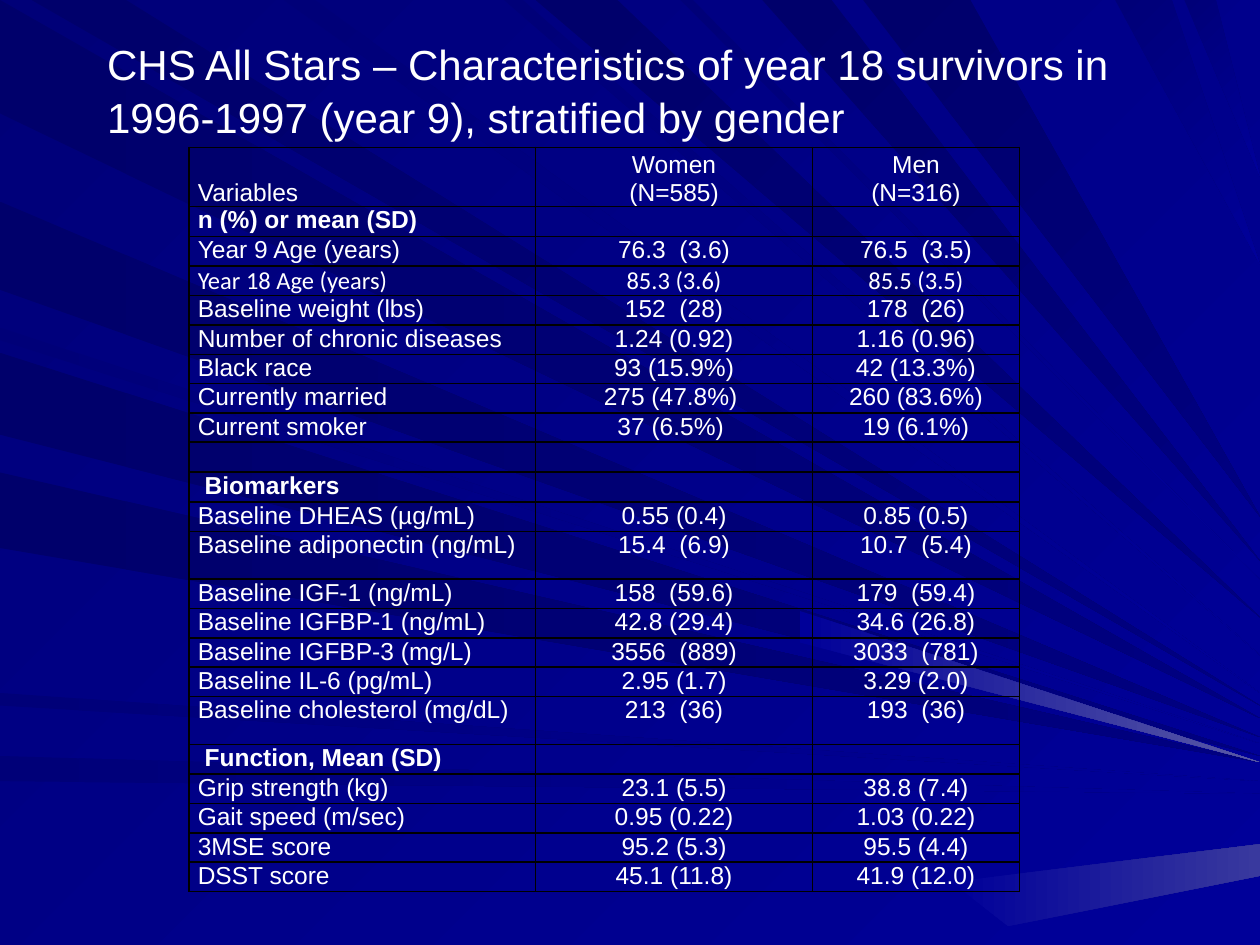
from lxml import etree
from pptx import Presentation
from pptx.dml.color import RGBColor
from pptx.enum.text import MSO_ANCHOR, MSO_AUTO_SIZE, PP_ALIGN
from pptx.oxml.ns import qn
from pptx.util import Inches, Pt

LEFT, CENTER = PP_ALIGN.LEFT, PP_ALIGN.CENTER
TOP, MIDDLE, BOTTOM = MSO_ANCHOR.TOP, MSO_ANCHOR.MIDDLE, MSO_ANCHOR.BOTTOM
NO_AUTOFIT = MSO_AUTO_SIZE.NONE

WHITE = RGBColor.from_string("FFFFFF")
BLACK = RGBColor.from_string("000000")
DEEP = RGBColor.from_string("00006B")
NAVY = RGBColor.from_string("000078")
DARK = RGBColor.from_string("000080")
BLUE = RGBColor.from_string("000099")
HAZE = RGBColor.from_string("39399E")
SHINE = RGBColor.from_string("5A5AA6")

# Rays run from an edge of the slide to a tip on the right side:
# start and end on the edge, height of the tip, in inches
LEFT_RAYS = [(0, 0.9, 5.7), (1.6, 2.3, 5.85), (2.6, 2.7, 5.9), (2.8, 3.45, 6),
             (3.75, 4.35, 6.05), (5.5, 5.6, 6.2), (6, 6.2, 6.3)]
TOP_RAYS = [(0.25, 1, 5.6), (2.25, 2.5, 5.5), (4, 4.15, 5.2), (4.25, 4.9, 4.9),
            (5.4, 5.5, 4.6), (6.05, 6.6, 4.45), (6.85, 7.7, 4.1),
            (8.85, 9.3, 2.1), (9.4, 9.65, 1.4)]

ROWS = [
    ("Variables", "Women\n(N=585)", "Men\n(N=316)"),
    ("n (%) or mean (SD)", "", ""),
    ("Year 9 Age (years)", "76.3  (3.6)", "76.5  (3.5)"),
    ("Year 18 Age (years)", "85.3 (3.6)", "85.5 (3.5)"),
    ("Baseline weight (lbs)", "152  (28)", "178  (26)"),
    ("Number of chronic diseases", "1.24 (0.92)", "1.16 (0.96)"),
    ("Black race", "93 (15.9%)", "42 (13.3%)"),
    ("Currently married", "275 (47.8%) ", "260 (83.6%)"),
    ("Current smoker", "37 (6.5%) ", "19 (6.1%)"),
    ("", "", ""),
    (" Biomarkers", "", ""),
    ("Baseline DHEAS (µg/mL)", "0.55 (0.4)", "0.85 (0.5)"),
    ("Baseline adiponectin (ng/mL)", "15.4  (6.9)", "10.7  (5.4)"),
    ("Baseline IGF-1 (ng/mL)", "158  (59.6)", "179  (59.4)"),
    ("Baseline IGFBP-1 (ng/mL)", "42.8 (29.4)", "34.6 (26.8)"),
    ("Baseline IGFBP-3 (mg/L)", "3556  (889)", "3033  (781)"),
    ("Baseline IL-6 (pg/mL)", "2.95 (1.7)", "3.29 (2.0)"),
    ("Baseline cholesterol (mg/dL)", "213  (36)", "193  (36)"),
    (" Function, Mean (SD)", "", ""),
    ("Grip strength (kg)", "23.1 (5.5)", "38.8 (7.4)"),
    ("Gait speed (m/sec)", "0.95 (0.22)", "1.03 (0.22)"),
    ("3MSE score", "95.2 (5.3)", "95.5 (4.4)"),
    ("DSST score", "45.1 (11.8)", "41.9 (12.0)"),
]
CALIBRI_ROW = 3
TABLE_HEIGHT = 5.89
TALL_ROWS = {0: 0.47, 12: 0.38, 17: 0.38}
ROW_HEIGHT = (TABLE_HEIGHT - sum(TALL_ROWS.values())) / (len(ROWS) - len(TALL_ROWS))


def set_gradient(fill, start, end, angle):
    """Two-colour linear gradient, angle measured clockwise."""
    fill.gradient()
    fill.gradient_angle = -angle % 360
    for stop, color in zip(fill.gradient_stops, (start, end)):
        stop.color.rgb = color


def add_borders(cell):
    tcPr = cell._tc.get_or_add_tcPr()
    for side in ("a:lnL", "a:lnR", "a:lnT", "a:lnB"):
        ln = etree.SubElement(tcPr, qn(side), w=str(Pt(1)))
        solid = etree.SubElement(ln, qn("a:solidFill"))
        etree.SubElement(solid, qn("a:srgbClr"), val=str(BLACK))


prs = Presentation()
prs.slide_width, prs.slide_height = Inches(10), Inches(7.5)
s = prs.slides.add_slide(prs.slide_layouts[5])
set_gradient(s.background.fill, NAVY, BLUE, 45)

# Rays: wide ones are darker
polygons = []
for edge_rays, angle in ((LEFT_RAYS, 0), (TOP_RAYS, 45)):
    for a, b, tip in edge_rays:
        ends = [(0, a), (0, b)] if edge_rays is LEFT_RAYS else [(a, 0), (b, 0)]
        start, end = (DEEP, DARK) if b - a > 0.5 else (NAVY, BLUE)
        polygons.append((ends + [(10, tip)], start, end, angle))
polygons.append(([(6.35, 4.85), (6.35, 5.1), (10, 6.05)], BLUE, SHINE, 0))
polygons.append(([(7.55, 7), (8, 7.35), (10, 6.95), (10, 6.7)], BLUE, HAZE, 0))

rays = s.shapes.add_group_shape()
for points, start, end, angle in polygons:
    corners = [(Inches(x), Inches(y)) for x, y in points]
    builder = rays.shapes.build_freeform(*corners[0])
    builder.add_line_segments(corners[1:], close=True)
    sp = builder.convert_to_shape()
    sp.shadow.inherit = False
    sp.line.fill.background()
    set_gradient(sp.fill, start, end, angle)

# Title, brought in front of the rays
title = s.shapes.title
s.shapes._spTree.append(title._element)
title.left, title.top = Inches(0.75), Inches(0.25)
title.width, title.height = Inches(8.67), Inches(0.91)
tf = title.text_frame
tf.text = ("CHS All Stars – Characteristics of year 18 survivors in "
           "1996-1997 (year 9), stratified by gender")
tf.word_wrap = True
tf.auto_size = NO_AUTOFIT
tf.vertical_anchor = MIDDLE
p = tf.paragraphs[0]
p.alignment = LEFT
p.line_spacing = 1.05
font = p.runs[0].font
font.name, font.size, font.color.rgb = "Arial", Pt(24), WHITE

# Table
table = s.shapes.add_table(len(ROWS), 3, Inches(1.5), Inches(1.17),
                           Inches(6.59), Inches(TABLE_HEIGHT)).table
table.first_row = table.horz_banding = False
for col, width in zip(table.columns, (2.75, 2.2, 1.64)):
    col.width = Inches(width)

for i, texts in enumerate(ROWS):
    table.rows[i].height = Inches(TALL_ROWS.get(i, ROW_HEIGHT))
    for j, text in enumerate(texts):
        cell = table.cell(i, j)
        add_borders(cell)
        cell.fill.background()
        cell.margin_left = cell.margin_right = Inches(0.07)
        cell.margin_top = cell.margin_bottom = 0
        cell.vertical_anchor = BOTTOM if i == 0 else TOP
        if not text:
            etree.SubElement(cell.text_frame.paragraphs[0]._p, qn("a:endParaRPr"), sz="1400")
            continue
        cell.text_frame.text = text
        for p in cell.text_frame.paragraphs:
            p.alignment = CENTER if j else LEFT
            font = p.runs[0].font
            font.name = "Calibri" if i == CALIBRI_ROW else "Arial"
            font.size, font.color.rgb = Pt(14), WHITE
            font.bold = not texts[1]

prs.save("out.pptx")
